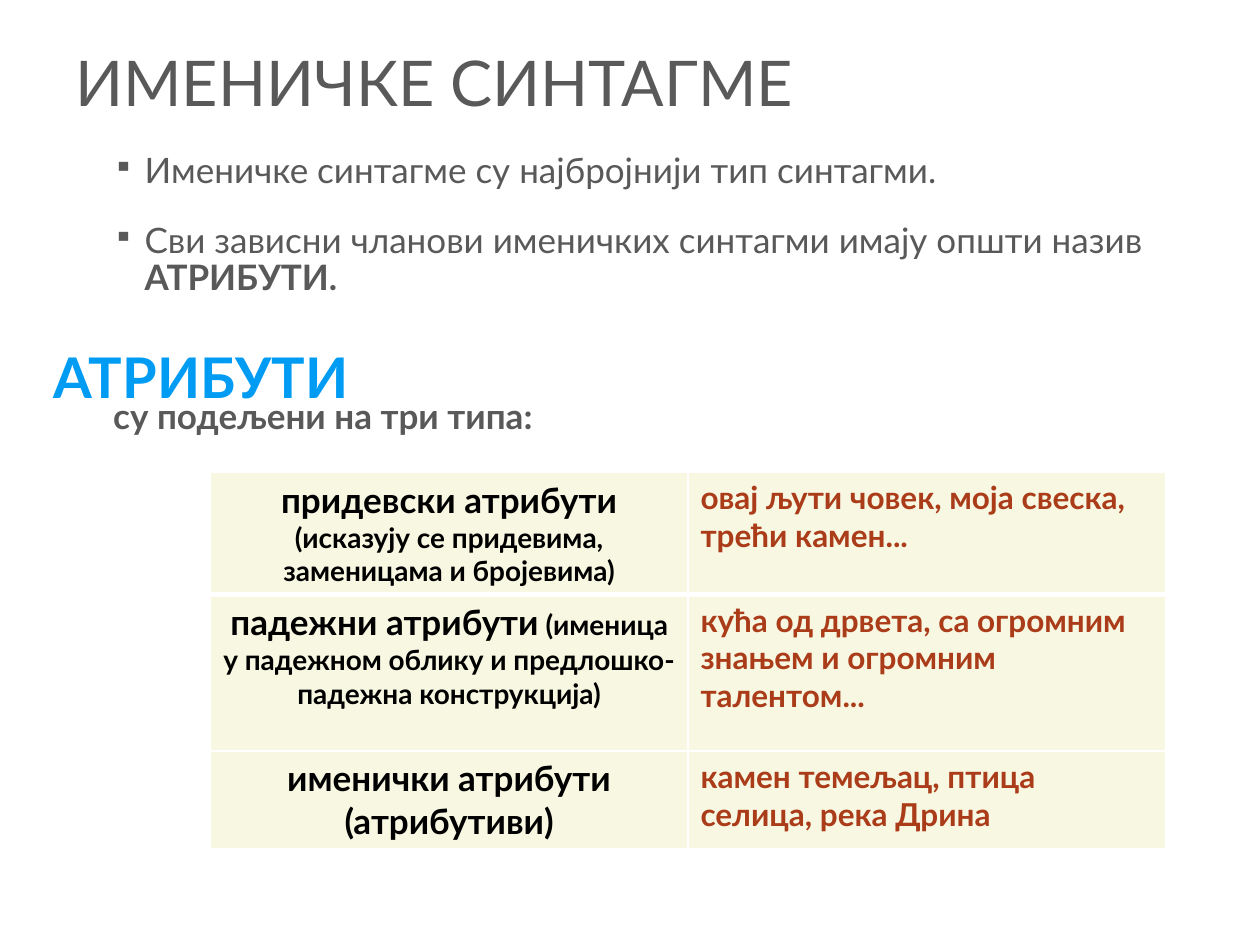
from pptx import Presentation
from pptx.dml.color import RGBColor
from pptx.enum.text import MSO_ANCHOR, PP_ALIGN
from pptx.oxml import parse_xml
from pptx.oxml.ns import nsdecls
from pptx.util import Inches, Pt

GRAY = RGBColor(0x59, 0x59, 0x59)
BLUE = RGBColor(0x00, 0x9C, 0xF4)
BLACK = RGBColor(0x00, 0x00, 0x00)
RUST = RGBColor(0xAB, 0x3C, 0x19)
CREAM = RGBColor(0xF7, 0xF7, 0xE2)


def add_run(p, text, size=20, color=GRAY, bold=False):
    r = p.add_run()
    r.text = text
    r.font.name = "Lato"
    r.font.size = Pt(size)
    r.font.bold = bold
    r.font.color.rgb = color


def add_box(slide, left, top, width, height, anchor=MSO_ANCHOR.TOP):
    tf = slide.shapes.add_textbox(
        Inches(left), Inches(top), Inches(width), Inches(height)).text_frame
    tf.word_wrap = True
    tf.vertical_anchor = anchor
    return tf


prs = Presentation()
prs.slide_width, prs.slide_height = Inches(10), Inches(7.5)
s = prs.slides.add_slide(prs.slide_layouts[6])

# Title
p = add_box(s, 0.5, 0.33, 7.58, 0.67, MSO_ANCHOR.BOTTOM).paragraphs[0]
p.line_spacing = 0.9
add_run(p, "ИМЕНИЧКЕ СИНТАГМЕ", size=36)

# Body: (plain text, bold text, bulleted, space before)
body = [
    ("Именичке синтагме су најбројнији тип синтагми.", "", True, 0),
    ("Сви зависни чланови именичких синтагми имају општи назив ",
     "АТРИБУТИ.", True, 18),
    ("", "су подељени на три типа:", False, 57.6),
]
tf = add_box(s, 0.75, 1.17, 8.83, 5.75)
for i, (plain, strong, bulleted, before) in enumerate(body):
    p = tf.paragraphs[0] if i == 0 else tf.add_paragraph()
    pPr = p._p.get_or_add_pPr()
    pPr.set("marL", str(Inches(0.3)))
    pPr.set("indent", str(Inches(-0.25)))
    if bulleted:
        pPr.append(parse_xml(f'<a:buSzPct {nsdecls("a")} val="80000"/>'))
        pPr.append(parse_xml(f'<a:buChar {nsdecls("a")} char="▪"/>'))
    p.line_spacing = 0.9
    p.space_before = Pt(before)
    if plain:
        add_run(p, plain)
    if strong:
        add_run(p, strong, bold=True)

# Table of attribute types: (name, explanation, examples)
rows = [
    ("придевски атрибути ", "(исказују се придевима, заменицама и бројевима)",
     "овај љути човек, моја свеска, трећи камен..."),
    ("падежни атрибути",
     " (именица у падежном облику и предлошко-падежна конструкција)",
     "кућа од дрвета, са огромним знањем и огромним талентом..."),
    ("именички атрибути (атрибутиви)", "",
     "камен темељац, птица селица, река Дрина"),
]
heights = [0.97, 1.24, 0.78]
table = s.shapes.add_table(3, 2, Inches(1.67), Inches(3.75),
                           Inches(7.58), Inches(sum(heights))).table
for i, (name, note, examples) in enumerate(rows):
    table.rows[i].height = Inches(heights[i])
    p = table.cell(i, 0).text_frame.paragraphs[0]
    p.alignment = PP_ALIGN.CENTER
    add_run(p, name, color=BLACK, bold=True)
    if note:
        add_run(p, note, size=16, color=BLACK, bold=True)
    p = table.cell(i, 1).text_frame.paragraphs[0]
    add_run(p, examples, size=18, color=RUST, bold=True)

    # White borders, thicker under the first row
    for cell in table.rows[i].cells:
        tcPr = cell._tc.get_or_add_tcPr()
        for side in "LRTB":
            thick = (i, side) in ((0, "B"), (1, "T"))
            tcPr.append(parse_xml(
                f'<a:ln{side} {nsdecls("a")} w="{Pt(3 if thick else 1)}"><a:solidFill>'
                f'<a:srgbClr val="FFFFFF"/></a:solidFill></a:ln{side}>'))
        cell.fill.solid()
        cell.fill.fore_color.rgb = CREAM

# Heading over the table
p = add_box(s, 0.33, 2.67, 4.58, 0.64).paragraphs[0]
add_run(p, "АТРИБУТИ", size=32, color=BLUE, bold=True)

prs.save("out.pptx")
